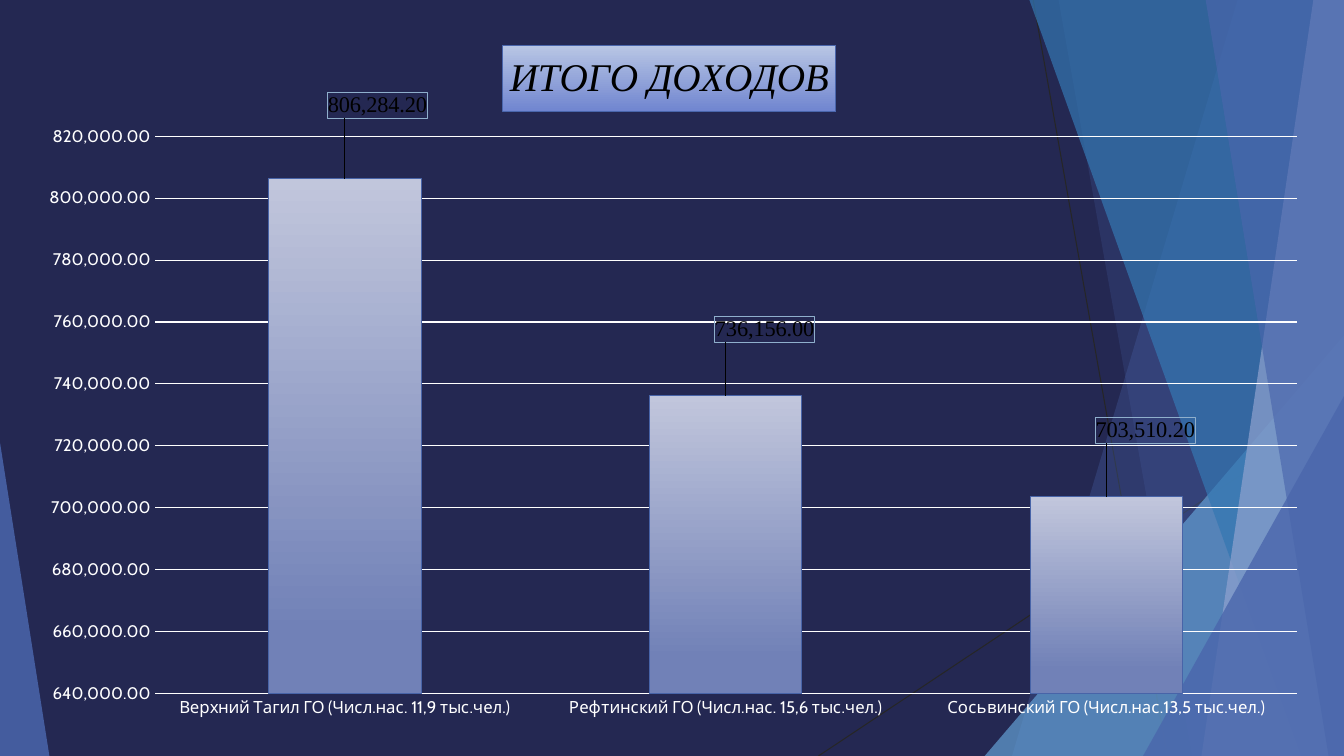
from lxml.etree import SubElement
from pptx import Presentation
from pptx.chart.data import CategoryChartData
from pptx.dml.color import RGBColor
from pptx.enum.chart import XL_CHART_TYPE, XL_LABEL_POSITION, XL_TICK_MARK
from pptx.enum.shapes import MSO_CONNECTOR, MSO_SHAPE
from pptx.oxml import parse_xml
from pptx.oxml.ns import nsdecls, qn
from pptx.util import Pt

NAVY = RGBColor(0x24, 0x28, 0x52)
CHARCOAL = RGBColor(0x26, 0x26, 0x26)
INDIGO = RGBColor(0x4A, 0x66, 0xAC)
SKY = RGBColor(0x62, 0x9D, 0xD1)
OCEAN = RGBColor(0x34, 0x77, 0xB2)
LAVENDER = RGBColor(0x90, 0xA2, 0xCF)
BAR_TOP = RGBColor(0xC1, 0xC6, 0xDC)
BAR_BOTTOM = RGBColor(0x71, 0x81, 0xB7)
BAR_LINE = RGBColor(0x48, 0x64, 0xA8)
TITLE_TOP = RGBColor(0xB8, 0xC6, 0xE4)
TITLE_BOTTOM = RGBColor(0x70, 0x85, 0xD0)
LABEL_LINE = RGBColor(0x8F, 0xAF, 0xCC)
WHITE = RGBColor(0xFF, 0xFF, 0xFF)
BLACK = RGBColor(0, 0, 0)

WIDTH, HEIGHT = 960, 540
TITLE = "ИТОГО ДОХОДОВ"
NUMBER_FORMAT = "#,##0.00"
INCOMES = {
    "Верхний Тагил ГО (Числ.нас. 11,9 тыс.чел.)": 806284.2,
    "Рефтинский ГО (Числ.нас. 15,6 тыс.чел.)": 736156,
    "Сосьвинский ГО (Числ.нас.13,5 тыс.чел.)": 703510.2,
}
LABEL_OFFSETS = [(0.025, -0.08), (0.03, -0.07), (0.03, -0.07)]


class IncomeSlide:
    """Holds the slide's style and draws its facets, lines and chart."""

    body_font = "Cabin"
    accent_font = "Times New Roman"
    line_width = Pt(0.75)

    def __init__(self, presentation):
        self.slide = presentation.slides.add_slide(presentation.slide_layouts[6])
        background = self.slide.background.fill
        background.solid()
        background.fore_color.rgb = NAVY

    def style_font(self, font, size, color, name, italic=False):
        font.size, font.name = Pt(size), name
        font.color.rgb = color
        font.bold, font.italic = False, italic

    def style_line(self, line, color):
        line.color.rgb = color
        line.width = self.line_width

    def style_gradient(self, fill, top, bottom, end=1):
        fill.gradient()
        fill.gradient_angle = 270
        for stop, color, position in zip(fill.gradient_stops, (top, bottom), (0, end)):
            stop.color.rgb = color
            stop.position = position

    def style_facet(self, shape, color, opacity):
        shape.shadow.inherit = False
        shape.line.fill.background()
        shape.fill.solid()
        shape.fill.fore_color.rgb = color
        color_element = shape.fill._xPr.find(qn("a:solidFill"))[0]
        SubElement(color_element, qn("a:alpha"), val=str(opacity * 1000))

    def line(self, *ends):
        connector = self.slide.shapes.add_connector(
            MSO_CONNECTOR.STRAIGHT, *map(Pt, ends))
        self.style_line(connector.line, CHARCOAL)
        SubElement(connector._element.spPr, qn("a:effectLst"))

    def facet(self, top_left, bottom_left, color, opacity):
        top = Pt(-0.6)
        builder = self.slide.shapes.build_freeform(Pt(top_left), top)
        builder.add_line_segments([
            (Pt(WIDTH), top), (Pt(WIDTH), Pt(HEIGHT)), (Pt(bottom_left), Pt(HEIGHT))])
        self.style_facet(builder.convert_to_shape(), color, opacity)

    def triangle(self, left, top, width, apex, color, opacity):
        shape = self.slide.shapes.add_shape(
            MSO_SHAPE.ISOSCELES_TRIANGLE, Pt(left), Pt(top), Pt(width), Pt(HEIGHT - top))
        shape.adjustments[0] = apex
        self.style_facet(shape, color, opacity)

    def place(self, element, index, x, y, size=None, mode="edge"):
        for layout in element.findall(qn("c:layout")):
            element.remove(layout)
        settings = {"xMode": mode, "yMode": mode, "x": x, "y": y}
        if size:
            settings = {"layoutTarget": "inner", **settings, "w": size[0], "h": size[1]}
        if mode == "factor":
            settings = {"x": x, "y": y}
        tags = "".join(f'<c:{tag} val="{value}"/>' for tag, value in settings.items())
        element.insert(index, parse_xml(
            f'<c:layout {nsdecls("c")}><c:manualLayout>{tags}</c:manualLayout></c:layout>'))

    def axis(self, axis):
        axis.major_tick_mark = axis.minor_tick_mark = XL_TICK_MARK.NONE
        axis.format.line.fill.background()
        self.style_font(axis.tick_labels.font, 12, WHITE, self.body_font)

    def point_label(self, point, offset):
        label = point.data_label
        self.style_font(label.font, 16, BLACK, self.accent_font)
        label.position = XL_LABEL_POSITION.OUTSIDE_END
        element = label._dLbl
        for border in element.findall(qn("c:spPr")):
            element.remove(border)
        element.insert(1, parse_xml(
            f'<c:spPr {nsdecls("c", "a")}><a:noFill/><a:ln w="{self.line_width}"><a:solidFill>'
            f'<a:srgbClr val="{LABEL_LINE}"/></a:solidFill></a:ln></c:spPr>'))
        element.insert(1, parse_xml(
            f'<c:numFmt {nsdecls("c")} formatCode="{NUMBER_FORMAT}" sourceLinked="0"/>'))
        self.place(element, 1, *offset, mode="factor")

    def title(self, chart):
        title = chart.chart_title
        paragraph = title.text_frame.paragraphs[0]
        paragraph.text = TITLE
        self.style_font(paragraph.font, 28, BLACK, self.accent_font, italic=True)
        self.style_gradient(title.format.fill, TITLE_TOP, TITLE_BOTTOM)
        self.style_line(title.format.line, INDIGO)
        self.place(title._element, 1, 0.37, 0.027)

    def chart(self, left, top, width, height):
        data = CategoryChartData(number_format=NUMBER_FORMAT)
        data.categories = INCOMES.keys()
        data.add_series(TITLE, INCOMES.values())
        chart = self.slide.shapes.add_chart(
            XL_CHART_TYPE.COLUMN_CLUSTERED, Pt(left), Pt(top), Pt(width), Pt(height), data).chart
        self.style_font(chart.font, 10, WHITE, self.body_font)
        chart.has_legend = False
        self.title(chart)
        self.axis(chart.category_axis)
        values = chart.value_axis
        self.axis(values)
        values.minimum_scale, values.maximum_scale = 640000, 820000
        values.major_unit = 20000
        values.tick_labels.number_format = NUMBER_FORMAT
        values.tick_labels.number_format_is_linked = False
        self.style_line(values.major_gridlines.format.line, WHITE)
        plot = chart.plots[0]
        plot.gap_width, plot.vary_by_categories = 150, False
        series = plot.series[0]
        self.style_gradient(series.format.fill, BAR_TOP, BAR_BOTTOM, 0.88)
        self.style_line(series.format.line, BAR_LINE)
        for index, offset in enumerate(LABEL_OFFSETS):
            self.point_label(series.points[index], offset)
        plot_area = chart._chartSpace.find(".//" + qn("c:plotArea"))
        self.place(plot_area, 0, 0.102, 0.156, (0.879, 0.79))


def main():
    presentation = Presentation()
    presentation.slide_width, presentation.slide_height = Pt(WIDTH), Pt(HEIGHT)
    income = IncomeSlide(presentation)
    income.line(738, 0, 833.8, HEIGHT)
    income.line(WIDTH, 290.2, 584.6, HEIGHT)
    income.facet(884.2, 722.9, INDIGO, 30)
    income.facet(756, 851.8, INDIGO, 20)
    income.triangle(703.4, 239.8, 256.6, 1, SKY, 72)
    income.facet(735.1, 929.5, OCEAN, 70)
    income.facet(938.2, 858.2, LAVENDER, 70)
    income.facet(861.1, 949, INDIGO, 65)
    income.triangle(816.5, 283, 143.5, 1, INDIGO, 80)
    income.triangle(0, 316.1, 35.3, 0, INDIGO, 85)
    income.chart(15.8, 18.7, 928.1, 504)
    presentation.save("out.pptx")


if __name__ == "__main__":
    main()
